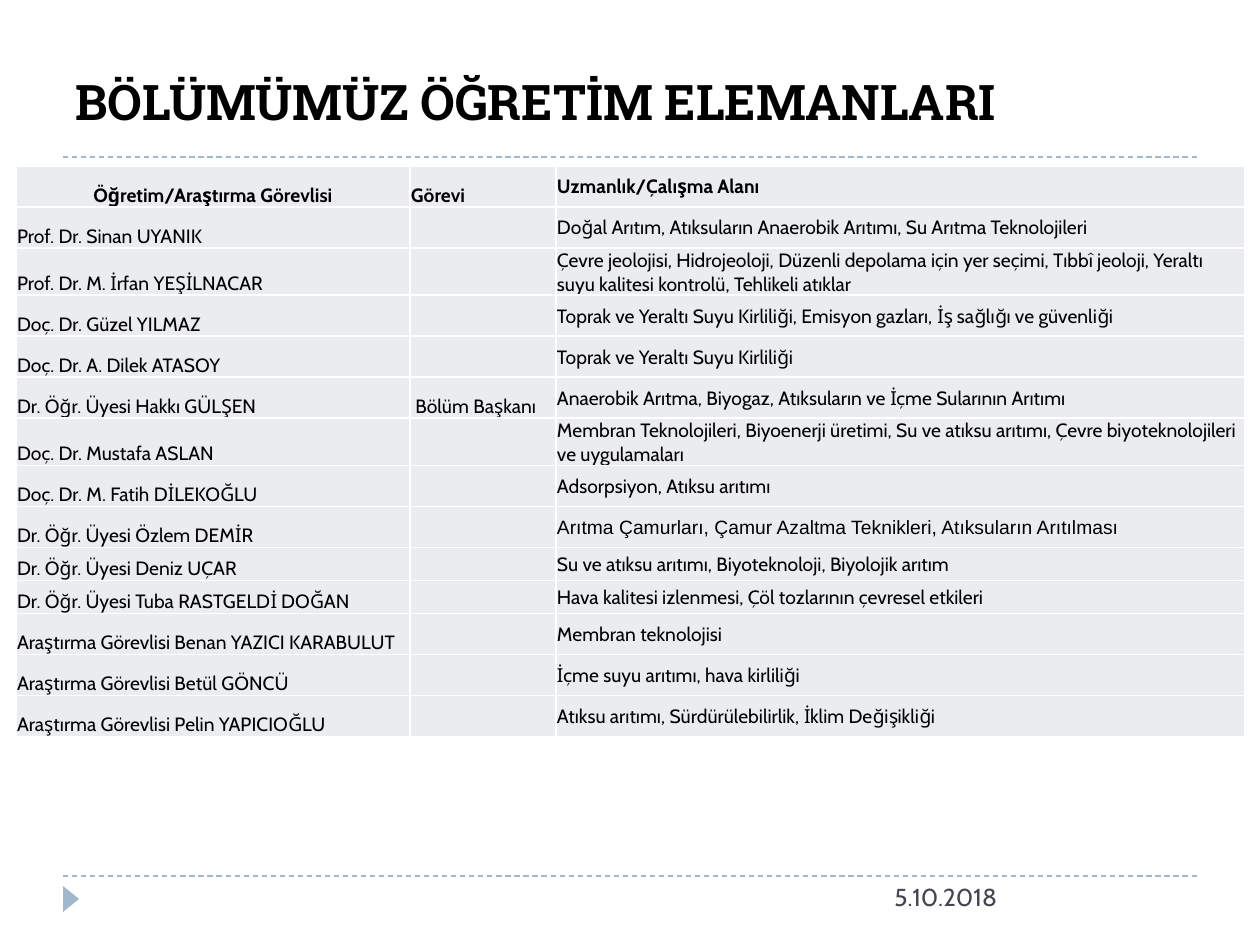
from lxml.etree import SubElement
from pptx import Presentation
from pptx.dml.color import RGBColor
from pptx.enum.dml import MSO_LINE
from pptx.enum.shapes import MSO_CONNECTOR, MSO_SHAPE
from pptx.enum.text import MSO_ANCHOR, PP_ALIGN
from pptx.oxml.ns import qn
from pptx.util import Emu, Pt

PX_PER_INCH = 126
BLACK = RGBColor(0x00, 0x00, 0x00)
WHITE = RGBColor(0xFF, 0xFF, 0xFF)
ACCENT = RGBColor(0x9F, 0xB8, 0xCD)
DATE_GREY = RGBColor(0x46, 0x46, 0x53)
CELL_GREY = RGBColor(0xEB, 0xEC, 0xF0)

BODY_FONT = "Cabin"
TITLE_FONT = "Roboto Slab"
CELL_SIZE = 11

COLUMN_WIDTHS = [394, 146, 689]
COLUMN_ANCHORS = [MSO_ANCHOR.BOTTOM, MSO_ANCHOR.BOTTOM, MSO_ANCHOR.MIDDLE]
ROW_HEIGHT = 41
LOW_ROW_HEIGHT = 33
LOW_ROWS = (9, 10)
ARIAL_CELL = (8, 2)

STAFF = [
    ("Öğretim/Araştırma Görevlisi", "Görevi", "Uzmanlık/Çalışma Alanı"),
    ("Prof. Dr. Sinan UYANIK", "",
     "Doğal Arıtım, Atıksuların Anaerobik Arıtımı, Su Arıtma Teknolojileri"),
    ("Prof. Dr. M. İrfan YEŞİLNACAR", "",
     "Çevre jeolojisi, Hidrojeoloji, Düzenli depolama için yer seçimi, "
     "Tıbbî jeoloji, Yeraltı suyu kalitesi kontrolü, Tehlikeli atıklar"),
    ("Doç. Dr. Güzel YILMAZ", "",
     "Toprak ve Yeraltı Suyu Kirliliği, Emisyon gazları, İş sağlığı ve güvenliği"),
    ("Doç. Dr. A. Dilek ATASOY", "", "Toprak ve Yeraltı Suyu Kirliliği"),
    ("Dr. Öğr. Üyesi Hakkı GÜLŞEN", " Bölüm Başkanı",
     "Anaerobik Arıtma, Biyogaz, Atıksuların ve İçme Sularının Arıtımı"),
    ("Doç. Dr. Mustafa ASLAN", "",
     "Membran Teknolojileri, Biyoenerji üretimi, Su ve atıksu arıtımı, "
     "Çevre biyoteknolojileri ve uygulamaları"),
    ("Doç. Dr. M. Fatih DİLEKOĞLU", "", "Adsorpsiyon, Atıksu arıtımı"),
    ("Dr. Öğr. Üyesi Özlem DEMİR", "",
     "Arıtma Çamurları, Çamur Azaltma Teknikleri, Atıksuların Arıtılması"),
    ("Dr. Öğr. Üyesi Deniz UÇAR", "",
     "Su ve atıksu arıtımı, Biyoteknoloji, Biyolojik arıtım"),
    ("Dr. Öğr. Üyesi Tuba RASTGELDİ DOĞAN", "",
     "Hava kalitesi izlenmesi, Çöl tozlarının çevresel etkileri"),
    ("Araştırma Görevlisi Benan YAZICI KARABULUT", "", "Membran teknolojisi"),
    ("Araştırma Görevlisi Betül GÖNCÜ", "", "İçme suyu arıtımı, hava kirliliği"),
    ("Araştırma Görevlisi Pelin YAPICIOĞLU", "",
     "Atıksu arıtımı, Sürdürülebilirlik, İklim Değişikliği"),
]


def px(length):
    return Emu(round(length * 914400 / PX_PER_INCH))


def write_text(frame, text, *, size, font=BODY_FONT, color=BLACK, bold=False,
               align=PP_ALIGN.LEFT):
    paragraph = frame.paragraphs[0]
    paragraph.alignment = align
    run = paragraph.add_run()
    run.text = text
    run.font.size = Pt(size)
    run.font.name = font
    run.font.bold = bold
    run.font.color.rgb = color


def add_label(slide, box, text, anchor=MSO_ANCHOR.TOP, **text_format):
    frame = slide.shapes.add_textbox(*map(px, box)).text_frame
    frame.word_wrap = True
    frame.vertical_anchor = anchor
    write_text(frame, text, **text_format)


def add_dashed_rule(slide, y):
    rule = slide.shapes.add_connector(
        MSO_CONNECTOR.STRAIGHT, px(63), px(y), px(1197), px(y))
    rule.line.color.rgb = ACCENT
    rule.line.width = Pt(0.75)
    rule.line.dash_style = MSO_LINE.DASH
    SubElement(rule._element.spPr, qn("a:effectLst"))


def add_footer_marker(slide):
    marker = slide.shapes.add_shape(
        MSO_SHAPE.ISOSCELES_TRIANGLE, px(58), px(891), px(26), px(16))
    marker.rotation = 90
    marker.shadow.inherit = False
    marker.fill.solid()
    marker.fill.fore_color.rgb = ACCENT
    marker.line.fill.background()


def style_cell(cell, anchor):
    """Set white borders, grey fill, tight margins and the anchor."""
    properties = cell._tc.get_or_add_tcPr()
    for side in ("lnL", "lnR", "lnT", "lnB"):
        border = SubElement(properties, qn(f"a:{side}"), w=str(Pt(1)))
        border_fill = SubElement(border, qn("a:solidFill"))
        SubElement(border_fill, qn("a:srgbClr"), val=str(WHITE))
    cell.fill.solid()
    cell.fill.fore_color.rgb = CELL_GREY
    cell.margin_left = cell.margin_right = cell.margin_top = px(1)
    cell.margin_bottom = 0
    cell.vertical_anchor = anchor


def fill_cell(cell, text, row, column):
    style_cell(cell, COLUMN_ANCHORS[column])
    if not text:
        # Keeps an empty cell from stretching its row
        end = cell.text_frame.paragraphs[0]._p.get_or_add_endParaRPr()
        end.set("sz", str(CELL_SIZE * 100))
        return
    write_text(
        cell.text_frame, text, size=CELL_SIZE, bold=row == 0,
        font="Arial" if (row, column) == ARIAL_CELL else BODY_FONT,
        align=PP_ALIGN.CENTER if (row, column) == (0, 0) else PP_ALIGN.LEFT)


def add_staff_table(slide):
    heights = [LOW_ROW_HEIGHT if row in LOW_ROWS else ROW_HEIGHT
               for row in range(len(STAFF))]
    table = slide.shapes.add_table(
        len(STAFF), len(COLUMN_WIDTHS), px(16), px(166),
        px(sum(COLUMN_WIDTHS)), px(sum(heights))).table
    table.first_row = False
    table.horz_banding = False
    for column, width in enumerate(COLUMN_WIDTHS):
        table.columns[column].width = px(width)
    for row, member in enumerate(STAFF):
        table.rows[row].height = px(heights[row])
        for column, text in enumerate(member):
            fill_cell(table.cell(row, column), text, row, column)


def main():
    presentation = Presentation()
    presentation.slide_width = px(1260)
    presentation.slide_height = px(945)
    slide = presentation.slides.add_slide(presentation.slide_layouts[6])
    for y in (876, 157):
        add_dashed_rule(slide, y)
    add_footer_marker(slide)
    add_label(slide, (63, 21, 1134, 116), "BÖLÜMÜMÜZ ÖĞRETİM ELEMANLARI",
              anchor=MSO_ANCHOR.BOTTOM, size=28, font=TITLE_FONT, bold=True)
    add_label(slide, (882, 876, 315, 50), "5.10.2018", size=14, color=DATE_GREY)
    add_staff_table(slide)
    presentation.save("out.pptx")


if __name__ == "__main__":
    main()
